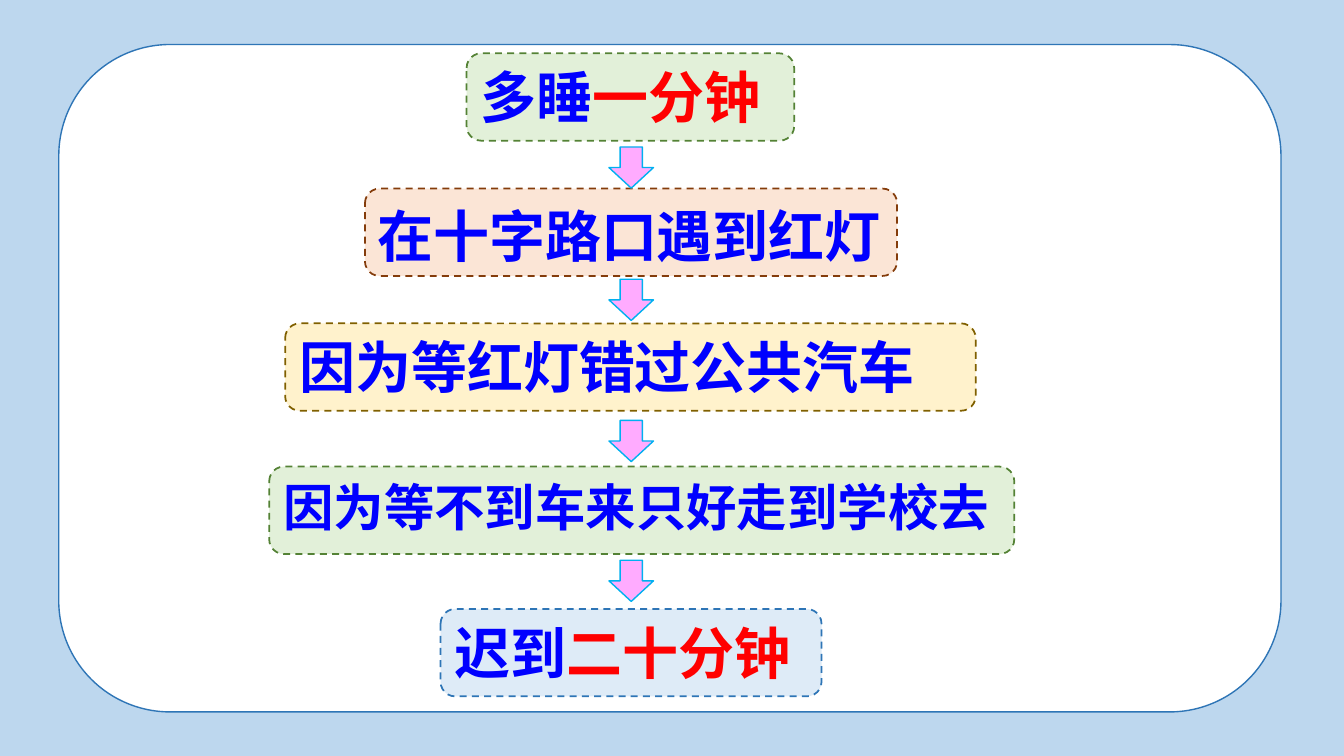
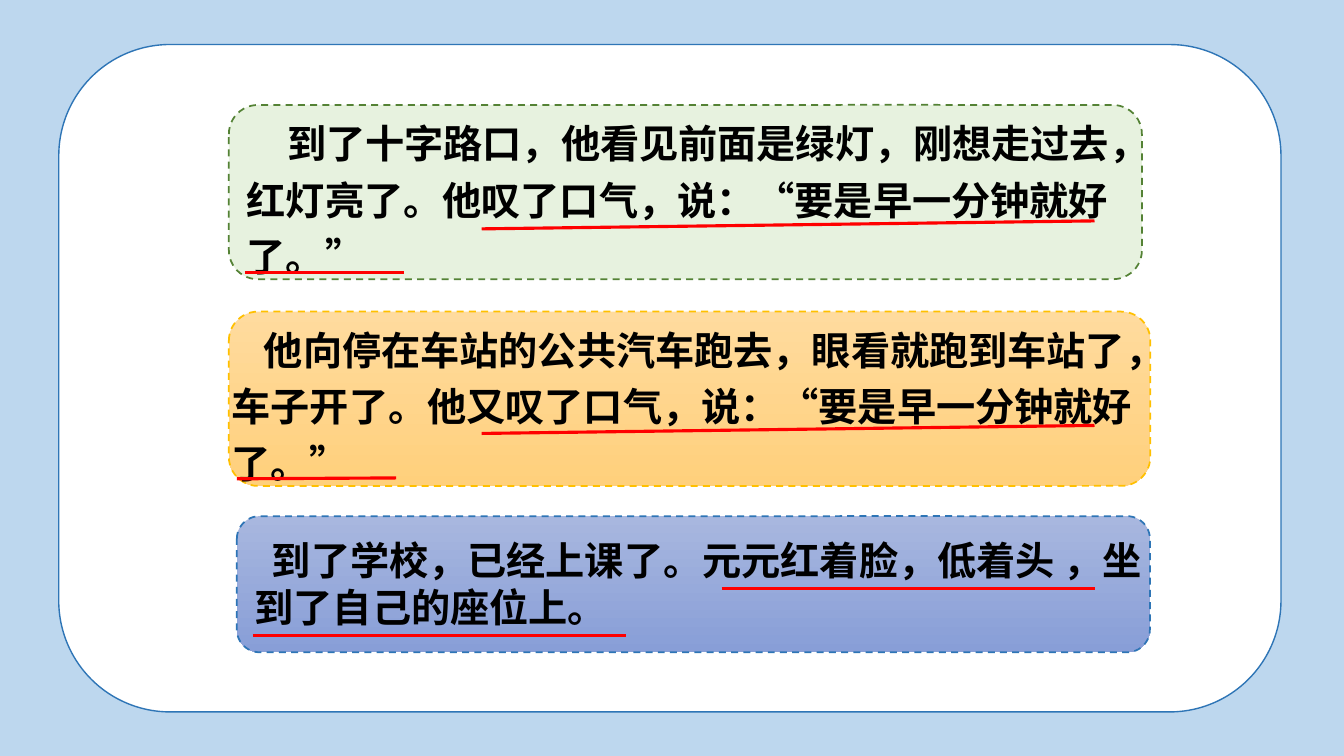
from dataclasses import dataclass
from typing import NamedTuple

from lxml.etree import SubElement
from pptx import Presentation
from pptx.dml.color import RGBColor as Rgb
from pptx.enum.dml import MSO_LINE as Dash
from pptx.enum.shapes import MSO_CONNECTOR as Link, MSO_SHAPE as Kind
from pptx.enum.text import MSO_ANCHOR as Anchor, PP_ALIGN as Align
from pptx.oxml.ns import qn
from pptx.util import Emu, Inches, Pt

COLS, ROWS = 32, 18  # square grid cells
CELL = Inches(7.5) / ROWS


@dataclass(frozen=True)
class Theme:
    font: str = "Noto Sans CJK SC"
    sky: str = "BDD7EE"
    white: str = "FFFFFF"
    edge: str = "2E75B6"
    blue: str = "0000FF"
    red: str = "FF0000"
    black: str = "000000"
    pink: str = "FF99FF"
    cyan: str = "00B0F0"
    green: str = "E2F0D9"
    moss: str = "548235"
    peach: str = "FBE5D6"
    brown: str = "843C0B"
    cream: str = "FFF2CC"
    olive: str = "806000"
    ice: str = "DEEBF7"
    gold: str = "FFC000"
    amber: tuple = ("FFDB9E", "FFD07C")
    slate: tuple = ("A8B7DF", "889ED7")
    big: int = 40
    mid: int = 36
    body: int = 28
    thin: float = 1
    rim: float = 1.25
    bold: float = 2.25
    alpha: int = 82


T = Theme()


class Box(NamedTuple):
    x: float
    y: float
    w: float
    h: float


class Step(NamedTuple):
    x: float
    y: float
    w: float
    fill: str
    line: str
    runs: tuple
    size: int = T.big
    pad: tuple = (0.1, 0.05, 0.1)  # left, top, right in inches


class Block(NamedTuple):
    box: Box
    fill: str | tuple
    line: str
    area: Box
    text: str
    indent: float
    gap: float
    marks: tuple  # underlines as x1, y1, x2, y2
    alpha: int = 100


def at(*nums: float) -> list:
    return [Emu(round(n * CELL)) for n in nums]


def paint(fill, tone: str | tuple, alpha: int = 100) -> None:
    """Solid for one colour, top to bottom gradient for two."""
    if isinstance(tone, tuple):
        fill.gradient()
        fill.gradient_angle = 270
        for stop, hue in zip(fill.gradient_stops, tone):
            stop.color.rgb = Rgb.from_string(hue)
        return
    fill.solid()
    fill.fore_color.rgb = Rgb.from_string(tone)


def draw(page, kind, box: Box, fill: str | tuple, line: str,
         width: float = T.thin, alpha: int = 100):
    shape = page.shapes.add_shape(kind, *at(*box))
    shape.shadow.inherit = False
    paint(shape.fill, fill)
    if alpha < 100:
        hue = shape._element.spPr.find(qn("a:solidFill"))[0]
        SubElement(hue, qn("a:alpha")).set("val", str(alpha * 1000))
    shape.line.color.rgb = Rgb.from_string(line)
    shape.line.width = Pt(width)
    return shape


def card(page, box: Box, fill: str | tuple, line: str, alpha: int = 100):
    shape = draw(page, Kind.ROUNDED_RECTANGULAR_CALLOUT, box, fill, line,
                 T.rim, alpha)
    for i, val in enumerate((0.237, -0.501, 0.167)):
        shape.adjustments[i] = val
    shape.line.dash_style = Dash.DASH
    return shape


def put(shape, runs: tuple, size: int, pad: tuple = (0.1, 0.05, 0.1),
        indent: float = 0, gap: float = 1) -> None:
    """Write (text, colour) runs as one left-aligned paragraph."""
    frame = shape.text_frame
    frame.word_wrap = True
    frame.vertical_anchor = Anchor.TOP
    frame.margin_left, frame.margin_top, frame.margin_right = map(Inches, pad)
    para = frame.paragraphs[0]
    para.alignment = Align.LEFT
    para.line_spacing = gap
    para._p.get_or_add_pPr().set("indent", str(Inches(indent)))
    for text, tone in runs:
        run = para.add_run()
        run.text = text
        font = run.font
        font.name, font.size, font.bold = T.font, Pt(size), True
        font.color.rgb = Rgb.from_string(tone)
        props = run._r.get_or_add_rPr()
        props.set("lang", "zh-CN")
        SubElement(props, qn("a:ea")).set("typeface", T.font)


def rule(page, mark: tuple) -> None:
    line = page.shapes.add_connector(Link.STRAIGHT, *at(*mark))
    line.line.color.rgb = Rgb.from_string(T.red)
    line.line.width = Pt(T.bold)
    SubElement(line._element.spPr, qn("a:effectLst"))


def base(deck, page) -> None:
    """Give the master its backdrop and white frame."""
    master = deck.slide_master
    paint(master.background.fill, T.sky)
    frame = draw(page, Kind.ROUNDED_RECTANGLE, Box(1.4, 1.06, 29.1, 15.89),
                 T.white, T.edge)._element
    frame.nvSpPr.cNvPr.set("id", "99")
    master.shapes._spTree.insert(2, frame)


# Chain of events
STEPS = (
    Step(11.11, 1.27, 7.8, T.green, T.moss,
         (("多睡", T.blue), ("一分钟", T.red))),
    Step(8.69, 4.49, 12.67, T.peach, T.brown,
         (("在十字路口遇到红灯", T.blue),), pad=(0.08, 0.09, 0)),
    Step(6.79, 7.7, 16.44, T.cream, T.olive,
         (("因为等红灯错过公共汽车", T.blue),)),
    Step(6.41, 11.11, 17.74, T.green, T.moss,
         (("因为等不到车来只好走到学校去", T.blue),), T.mid),
    Step(10.49, 14.5, 9.07, T.ice, T.edge,
         (("迟到", T.blue), ("二十分钟", T.red))),
)
DROPS = (3.5, 6.65, 10.01, 13.34)  # arrow tops

# Passages with underlined words
BLOCKS = (
    Block(Box(5.45, 2.5, 21.74, 4.15), T.green, T.moss,
          Box(5.64, 2.5, 21.6, 4.32),
          "到了十字路口，他看见前面是绿灯，刚想走过去，红灯亮了。"
          "他叹了口气，说：“要是早一分钟就好了。”", 0.4, 1.2,
          ((11.47, 5.45, 26.06, 5.26), (5.83, 6.48, 9.62, 6.48)), T.alpha),
    Block(Box(5.45, 7.42, 21.94, 4.15), T.amber, T.gold,
          Box(5.28, 7.42, 22.68, 4.32),
          "他向停在车站的公共汽车跑去，眼看就跑到车站了，车子开了。"
          "他又叹了口气，说：“要是早一分钟就好了。”", 0.32, 1.2,
          ((11.47, 10.32, 26.06, 10.13), (5.64, 11.4, 9.43, 11.38))),
    Block(Box(5.64, 12.29, 21.74, 3.24), T.slate, T.edge,
          Box(5.83, 12.65, 21.94, 2.5),
          "到了学校，已经上课了。元元红着脸，低着头 ，坐到了自己的座位上。",
          0.17, 1,
          ((17.18, 14.02, 26.06, 14.02), (6.02, 15.14, 14.9, 15.14))),
)


def chain(page) -> None:
    for s in STEPS:
        shape = card(page, Box(s.x, s.y, s.w, 2.08), s.fill, s.line)
        put(shape, s.runs, s.size, pad=s.pad)
    for top in DROPS:
        draw(page, Kind.DOWN_ARROW, Box(14.5, top, 1.06, 0.98), T.pink,
             T.cyan, alpha=T.alpha)


def story(page) -> None:
    for b in BLOCKS:
        card(page, b.box, b.fill, b.line, b.alpha)
        area = page.shapes.add_textbox(*at(*b.area))
        put(area, ((b.text, T.black),), T.body, indent=b.indent, gap=b.gap)
        for mark in b.marks:
            rule(page, mark)


def main() -> None:
    deck = Presentation()
    deck.slide_width, deck.slide_height = at(COLS, ROWS)
    blank = deck.slide_layouts[6]
    first, second = (deck.slides.add_slide(blank) for _ in range(2))
    base(deck, first)
    chain(first)
    story(second)
    deck.save("out.pptx")


if __name__ == "__main__":
    main()
